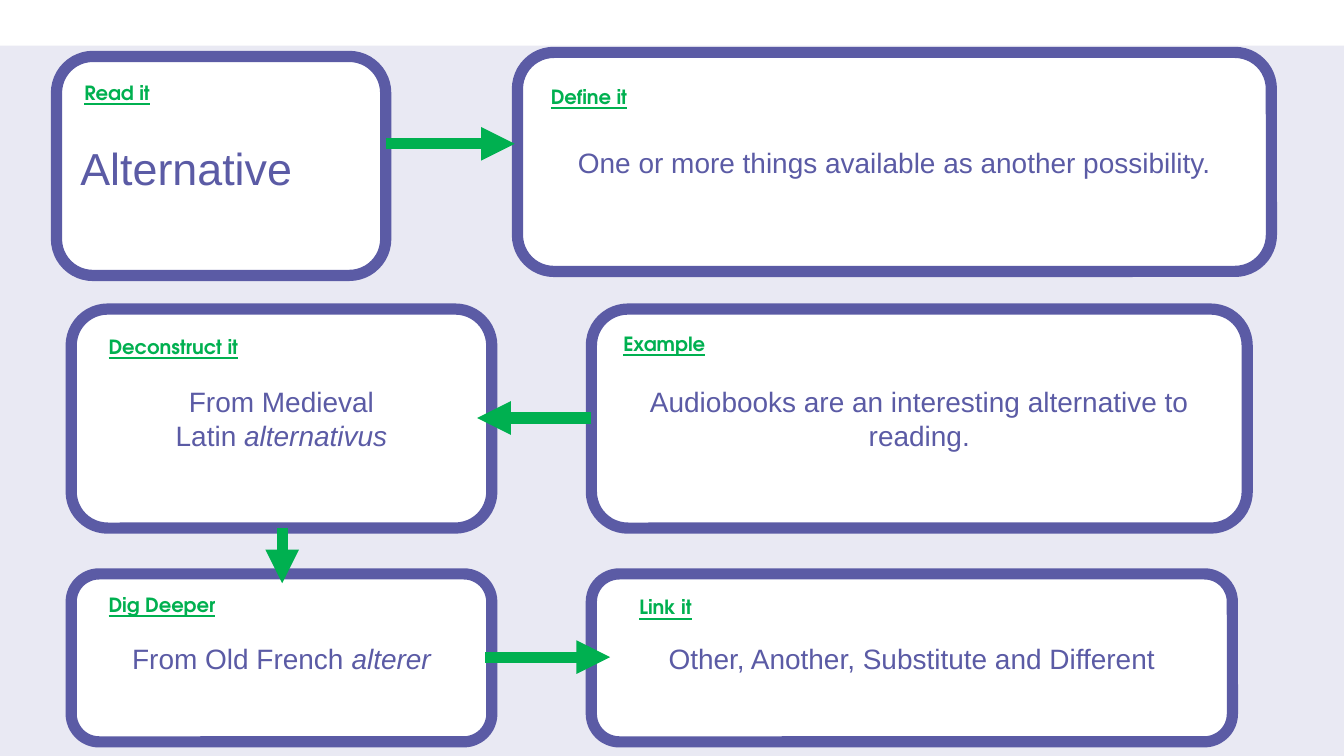
from lxml.etree import SubElement
from pptx import Presentation
from pptx.dml.color import RGBColor
from pptx.enum.shapes import MSO_CONNECTOR, MSO_SHAPE
from pptx.enum.text import MSO_ANCHOR, PP_ALIGN
from pptx.oxml.ns import qn
from pptx.util import Inches, Pt

WIDTH = 10
HEIGHT = WIDTH * 9 / 16
PURPLE, GREEN, WHITE, LAVENDER = "5B5BA5", "00B050", "FFFFFF", "E9E9F3"
BODY_FONT, HEADING_FONT = "Arial", "TeX Gyre Adventor"
BORDER = 6
NBSP = chr(160)  # keeps the italic word on the same line as the one before it

# Lower four cards share two columns and two rows
LEFT, RIGHT = 0.53, 4.4
MIDDLE, BOTTOM = 2.3, 4.27
LEFT_WIDTH, TALL, SHORT = 3.13, 1.63, 1.25

# heading, its offset in the card and width, card box, plain text, italic text
CARDS = [
    ("Read it", (0.11, 0.13, 1), (0.42, 0.42, 2.45, TALL), "Alternative", ""),
    ("Define it", (0.15, 0.19, 1), (3.85, 0.39, 5.61, TALL),
     "One or more things available as another possibility.", ""),
    ("Deconstruct it", (0.18, 0.14, 1.78), (LEFT, MIDDLE, LEFT_WIDTH, TALL),
     "From Medieval Latin" + NBSP, "alternativus"),
    ("Example", (0.14, 0.12, 1), (RIGHT, MIDDLE, 4.88, TALL),
     "Audiobooks are an interesting alternative to reading.", ""),
    ("Dig Deeper", (0.18, 0.09, 1.25), (LEFT, BOTTOM, LEFT_WIDTH, SHORT),
     "From Old French" + NBSP, "alterer"),
    ("Link it", (0.26, 0.11, 1), (RIGHT, BOTTOM, 4.77, SHORT),
     "Other, Another, Substitute and Different", ""),
]
KEY_WORD = "Alternative"

# start and end of each arrow
ARROWS = [
    ((RIGHT, 3.11), (3.55, 3.11)),
    ((2.87, 1.07), (3.83, 1.07)),
    ((3.61, 4.89), (4.54, 4.89)),
    ((2.1, MIDDLE + TALL), (2.1, 4.34)),
]


def color(value):
    return RGBColor.from_string(value)


def inches(*lengths):
    return [Inches(length) for length in lengths]


def style(font, name, size, value):
    font.name, font.size = name, Pt(size)
    font.color.rgb = color(value)


def add_card(slide, box, text, italic):
    card = slide.shapes.add_shape(MSO_SHAPE.ROUNDED_RECTANGLE, *inches(*box))
    card.shadow.inherit = False
    card.fill.solid()
    card.fill.fore_color.rgb = color(WHITE)
    card.line.color.rgb = color(PURPLE)
    card.line.width = Pt(BORDER)
    card.text_frame.vertical_anchor = MSO_ANCHOR.MIDDLE
    card.text_frame.word_wrap = True
    paragraph = card.text_frame.paragraphs[0]
    paragraph.add_run().text = text
    if italic:
        ending = paragraph.add_run()
        ending.text = italic
        ending.font.italic = True
    is_key = text == KEY_WORD
    style(paragraph.font, BODY_FONT, 24 if is_key else 15, PURPLE)
    paragraph.alignment = PP_ALIGN.LEFT if is_key else PP_ALIGN.CENTER
    if is_key:
        paragraph.line_spacing = 1.07


def add_arrow(slide, start, end):
    arrow = slide.shapes.add_connector(
        MSO_CONNECTOR.STRAIGHT, *inches(*start, *end))
    arrow.line.color.rgb = color(GREEN)
    arrow.line.width = Pt(BORDER)
    SubElement(arrow.line._get_or_add_ln(), qn("a:tailEnd"), type="triangle")
    SubElement(arrow._element.spPr, qn("a:effectLst"))


def add_heading(slide, heading, left, top, width):
    label = slide.shapes.add_textbox(*inches(left, top, width, 0.28))
    label.text_frame.word_wrap = True
    paragraph = label.text_frame.paragraphs[0]
    paragraph.text = heading
    style(paragraph.font, HEADING_FONT, 10.5, GREEN)
    paragraph.font.bold = paragraph.font.underline = True


def main():
    deck = Presentation()
    deck.slide_width, deck.slide_height = inches(WIDTH, HEIGHT)
    slide = deck.slides.add_slide(deck.slide_layouts[6])

    # Background and top band
    slide.background.fill.solid()
    slide.background.fill.fore_color.rgb = color(LAVENDER)
    band = slide.shapes.add_shape(
        MSO_SHAPE.RECTANGLE, *inches(0, 0, WIDTH, 0.34))
    band.shadow.inherit = False
    band.fill.solid()
    band.fill.fore_color.rgb = color(WHITE)
    band.line.fill.background()

    # Cards, then arrows and headings on top
    for _, _, box, text, italic in CARDS:
        add_card(slide, box, text, italic)
    for start, end in ARROWS:
        add_arrow(slide, start, end)
    for heading, (dx, dy, width), (left, top, *_), _, _ in CARDS:
        add_heading(slide, heading, left + dx, top + dy, width)

    deck.save("out.pptx")


if __name__ == "__main__":
    main()
